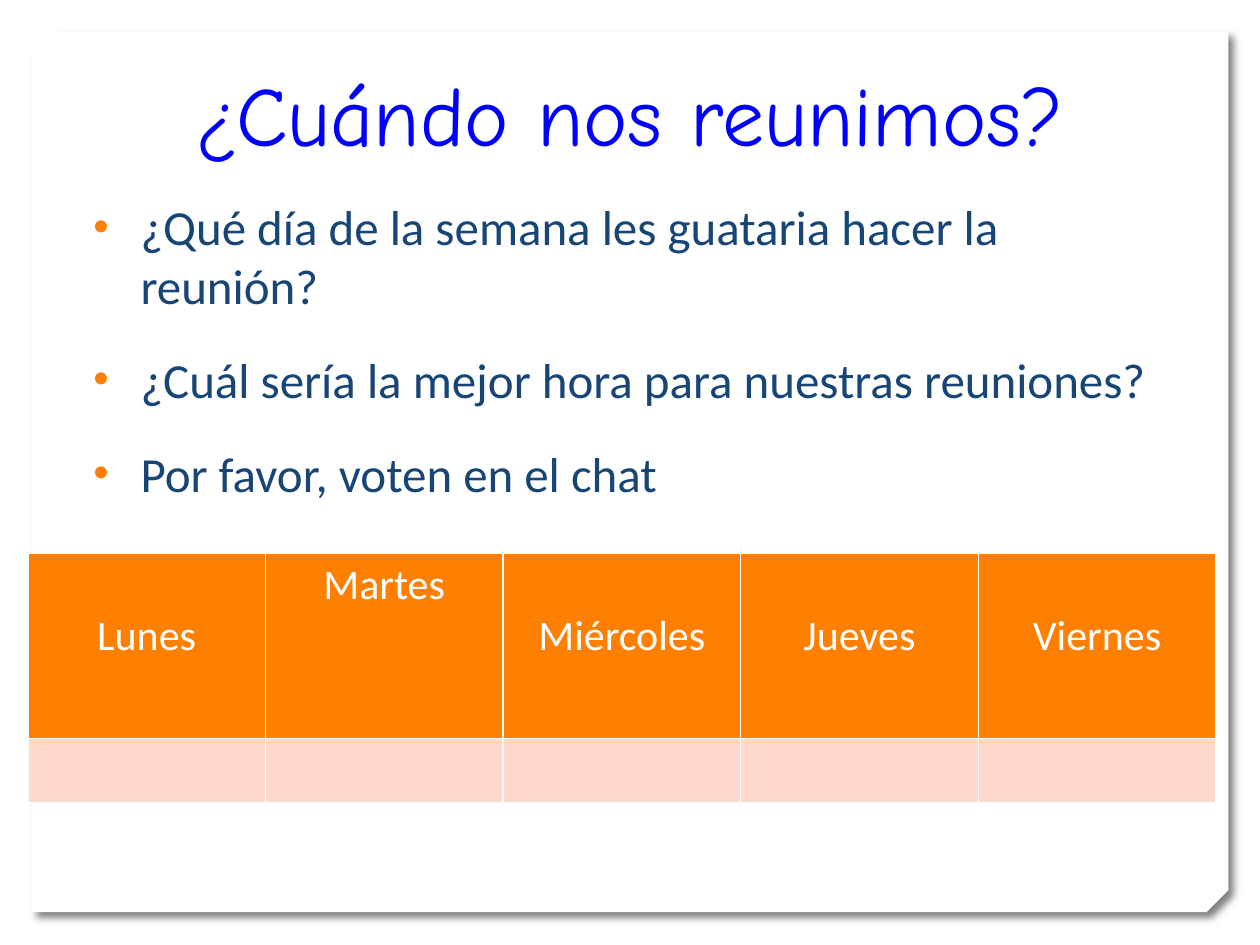
from lxml import etree
from pptx import Presentation
from pptx.dml.color import RGBColor
from pptx.enum import shapes, text
from pptx.oxml import ns
from pptx.util import Pt

# Content
TITLE = "¿Cuándo nos reunimos?"
QUESTIONS = [
    "¿Qué día de la semana les guataria hacer la reunión?",
    "¿Cuál sería la mejor hora para nuestras reuniones?",
    "Por favor, voten en el chat\u00a0",
]
DAYS = ["Lunes", "Martes", "Miércoles", "Jueves", "Viernes"]
RAISED_DAY = "Martes"

# Style
WHITE = RGBColor(0xFF, 0xFF, 0xFF)
BLUE = RGBColor(0x00, 0x00, 0xFF)
NAVY = RGBColor(0x17, 0x45, 0x76)
ORANGE = RGBColor(0xFF, 0x7F, 0x01)
PINK = RGBColor(0xFF, 0xD8, 0xCC)
BODY_FONT, TITLE_FONT = "Calibri", "Comic Neue"

# Layout in points: left, top, width, height
CARD = (18, 18, 684, 503.3)
TITLE_BOX = (61.2, 32.4, 596.9, 90)
QUESTION_BOX = (46.1, 108.7, 628.6, 203)
COLUMN_WIDTH = 135.8
ROW_HEIGHTS = (106, 36.5)
TABLE_LEFT, TABLE_TOP = 15.9, 316.1
CELL_MARGIN, DAY_DROP = 3.6, 29.3
INDENT = 27


def add_xml(parent, xml):
    """Append a DrawingML fragment to an element."""
    root = etree.fromstring(f'<r {ns.nsdecls("a")}>{xml}</r>')
    for child in list(root):
        parent.append(child)


def place(part, box):
    part.left, part.top, part.width, part.height = map(Pt, box)


def write(frame, lines, *, size, color, font=BODY_FONT, align=None,
          before=0, bullet=None):
    frame.word_wrap = True
    for i, line in enumerate(lines):
        paragraph = frame.paragraphs[0] if i == 0 else frame.add_paragraph()
        paragraph.alignment = align
        paragraph.line_spacing = 1.0
        paragraph.space_before = Pt(before)
        run = paragraph.add_run()
        run.text = line
        run.font.size, run.font.name = Pt(size), font
        run.font.color.rgb = color
        if bullet:
            props = paragraph._p.get_or_add_pPr()
            props.set("marL", str(int(Pt(INDENT))))
            props.set("indent", str(-int(Pt(INDENT))))
            add_xml(props, f'<a:buClr><a:srgbClr val="{bullet}"/></a:buClr>'
                           '<a:buSzPct val="90000"/><a:buFont typeface="Arial"/>'
                           '<a:buChar char="•"/>')


def paint_cell(cell, color):
    props = cell._tc.get_or_add_tcPr()
    for side in ("lnL", "lnR", "lnT", "lnB"):
        add_xml(props, f'<a:{side} w="{Pt(1)}"><a:solidFill>'
                       f'<a:srgbClr val="{WHITE}"/></a:solidFill></a:{side}>')
    cell.fill.solid()
    cell.fill.fore_color.rgb = color


prs = Presentation()
prs.slide_width, prs.slide_height = Pt(720), Pt(540)
slide = prs.slides.add_slide(prs.slide_layouts[1])

# Card behind everything
card = slide.shapes.add_shape(shapes.MSO_SHAPE.SNIP_2_DIAG_RECTANGLE,
                              *map(Pt, CARD))
card.adjustments[0], card.adjustments[1] = 0, 0.025
card.fill.solid()
card.fill.fore_color.rgb = WHITE
card.line.fill.background()
card_props = card._element.spPr
card_props.xfrm.set("flipV", "1")
add_xml(card_props, f'<a:effectLst><a:outerShdw blurRad="{Pt(4)}" '
                    f'dist="{Pt(5)}" dir="2700000" algn="tl" rotWithShape="0">'
                    '<a:srgbClr val="000000"><a:alpha val="50000"/></a:srgbClr>'
                    '</a:outerShdw></a:effectLst>')
slide.shapes._spTree.insert(2, card._element)

# Title
title = slide.shapes.title
place(title, TITLE_BOX)
title.text_frame.vertical_anchor = text.MSO_ANCHOR.TOP
write(title.text_frame, [TITLE], size=48, color=BLUE, font=TITLE_FONT,
      align=text.PP_ALIGN.CENTER)

# Questions
questions = slide.placeholders[1]
place(questions, QUESTION_BOX)
questions.text_frame.vertical_anchor = text.MSO_ANCHOR.TOP
write(questions.text_frame, QUESTIONS, size=28, color=NAVY, before=20,
      bullet=ORANGE)

# Voting table
votes = slide.shapes.add_table(
    len(ROW_HEIGHTS), len(DAYS), Pt(TABLE_LEFT), Pt(TABLE_TOP),
    Pt(COLUMN_WIDTH * len(DAYS)), Pt(sum(ROW_HEIGHTS))).table
for row, height in zip(votes.rows, ROW_HEIGHTS):
    row.height = Pt(height)
for col, day in enumerate(DAYS):
    votes.columns[col].width = Pt(COLUMN_WIDTH)
    header = votes.cell(0, col)
    drop = 0 if day == RAISED_DAY else DAY_DROP
    header.margin_top = Pt(CELL_MARGIN + drop)
    write(header.text_frame, [day], size=24, color=WHITE,
          align=text.PP_ALIGN.CENTER)
    paint_cell(header, ORANGE)
    paint_cell(votes.cell(1, col), PINK)

prs.save("out.pptx")
